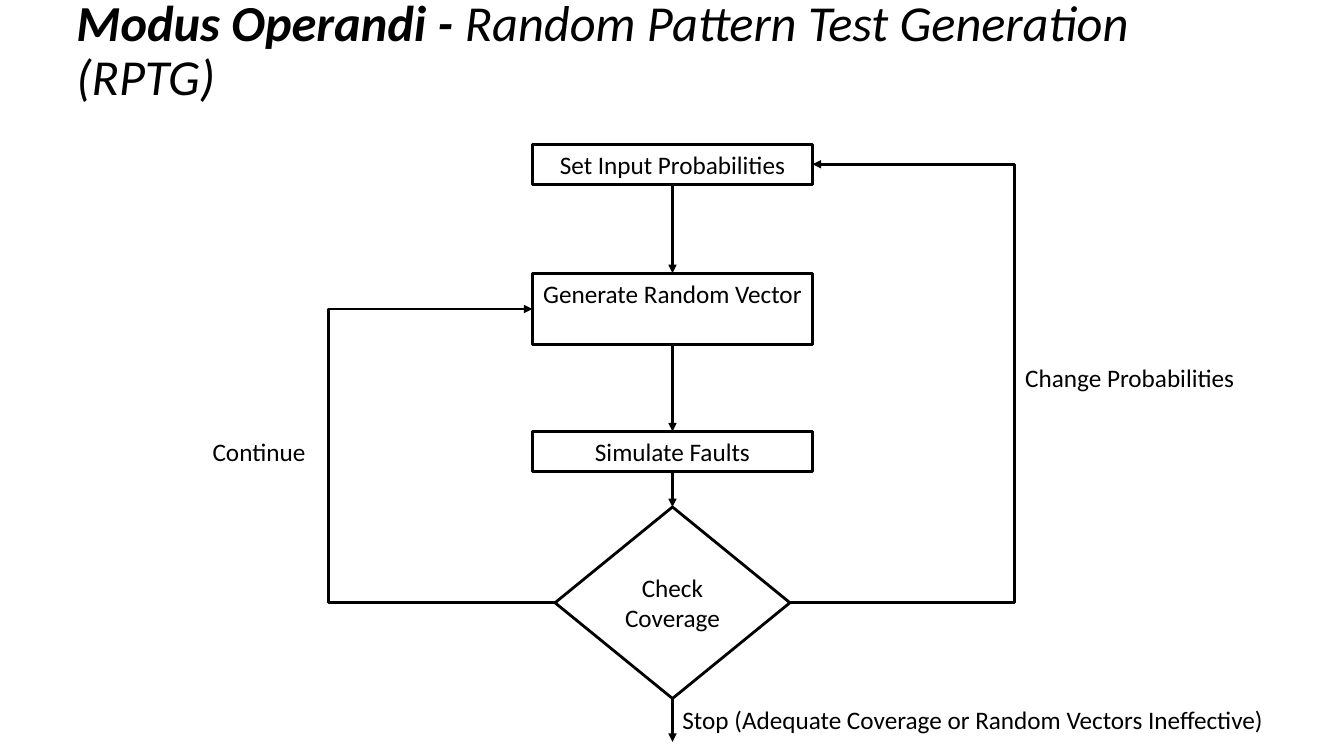
from pptx import Presentation
from pptx.dml.color import RGBColor
from pptx.enum.shapes import MSO_CONNECTOR, MSO_SHAPE
from pptx.enum.text import MSO_ANCHOR, PP_ALIGN
from pptx.oxml.ns import qn
from pptx.util import Inches, Pt
from lxml import etree

RECT, DIAMOND = MSO_SHAPE.RECTANGLE, MSO_SHAPE.DIAMOND
STRAIGHT, ELBOW = MSO_CONNECTOR.STRAIGHT, MSO_CONNECTOR.ELBOW
TOP, MIDDLE, BOTTOM = MSO_ANCHOR.TOP, MSO_ANCHOR.MIDDLE, MSO_ANCHOR.BOTTOM
LEFT, CENTER = PP_ALIGN.LEFT, PP_ALIGN.CENTER
SIDE_TOP, SIDE_LEFT, SIDE_BOTTOM, SIDE_RIGHT = range(4)
BLACK, WHITE = "000000", "FFFFFF"

TITLE = [
    ("Modus Operandi - ", {"bold": True, "italic": True}),
    ("Random Pattern Test Generation (RPTG)", {"bold": False, "italic": True}),
]
TITLE_BOX = (0.66, 0.03, 11.89, 1.08)
AXIS = 6.67
STEPS = [
    ("Set Input Probabilities", RECT, 1.43, 2.78, 0.4, None, TOP),
    ("Generate Random Vector", RECT, 2.71, 2.78, 0.71, None, TOP),
    ("Simulate Faults", RECT, 4.28, 2.78, 0.4, None, TOP),
    ("Check Coverage", DIAMOND, 5.03, 2.33, 1.9, WHITE, MIDDLE),
]
LOOPS = [
    ("Set Input Probabilities", SIDE_RIGHT, 10.06),
    ("Generate Random Vector", SIDE_LEFT, 3.26),
]
STOP_END = 7.36
LABELS = [
    ("Continue", (2.01, 4.28, 1.38, 0.4)),
    ("Change Probabilities", (10.07, 3.55, 2.69, 0.4)),
    ("Stop (Adequate Coverage or Random Vectors Ineffective)", (6.67, 6.94, 6.19, 0.4)),
]


def color(value):
    return RGBColor.from_string(value)


def write(owner, runs, size=18, anchor=TOP, align=LEFT, spacing=1.0):
    frame = owner.text_frame
    frame.word_wrap = True
    frame.vertical_anchor = anchor
    paragraph = frame.paragraphs[0]
    paragraph.alignment = align
    paragraph.line_spacing = spacing
    for text, style in runs:
        run = paragraph.add_run()
        run.text = text
        run.font.color.rgb = color(BLACK)
        for name, value in {"name": "Calibri", "size": Pt(size), **style}.items():
            setattr(run.font, name, value)


def outline(owner):
    owner.line.color.rgb = color(BLACK)
    owner.line.width = Pt(2)


def add_step(text, kind, top, width, height, fill, anchor):
    box = [Inches(v) for v in (AXIS - width / 2, top, width, height)]
    step = slide.shapes.add_shape(kind, *box)
    step.shadow.inherit = False
    if fill:
        step.fill.solid()
        step.fill.fore_color.rgb = color(fill)
    else:
        step.fill.background()
    outline(step)
    write(step, [(text, {})], anchor=anchor, align=CENTER)
    return step


def add_arrow(kind, source, source_side, target=None, target_side=None):
    arrow = slide.shapes.add_connector(kind, 0, 0, Inches(AXIS), Inches(STOP_END))
    arrow.begin_connect(source, source_side)
    if target is not None:
        arrow.end_connect(target, target_side)
    outline(arrow)
    properties = arrow._element.spPr
    etree.SubElement(properties.find(qn("a:ln")), qn("a:tailEnd"), type="triangle")
    etree.SubElement(properties, qn("a:effectLst"))
    return arrow


def bend_at(arrow, lane):
    span = arrow.end_x - arrow.begin_x
    ratio = round((Inches(lane) - arrow.begin_x) / span * 100000)
    properties = arrow._element.spPr
    guides = properties.find(qn("a:prstGeom")).get_or_add_avLst()
    etree.SubElement(guides, qn("a:gd"), name="adj1", fmla=f"val {ratio}")
    if span < 0:
        turn = properties.find(qn("a:xfrm"))
        for name, value in {"flipH": False, "flipV": False, "rot": 180.0}.items():
            setattr(turn, name, value)


deck = Presentation()
deck.slide_width, deck.slide_height = Inches(13.33), Inches(7.5)
slide = deck.slides.add_slide(deck.slide_layouts[6])

title = slide.shapes.add_textbox(*map(Inches, TITLE_BOX))
write(title, TITLE, size=36, anchor=BOTTOM, spacing=0.9)

steps = {step[0]: add_step(*step) for step in STEPS}
chain = list(steps.values())
check = chain[-1]

for target, side, lane in LOOPS:
    bend_at(add_arrow(ELBOW, check, side, steps[target], side), lane)
for upper, lower in zip(chain, chain[1:]):
    add_arrow(STRAIGHT, upper, SIDE_BOTTOM, lower, SIDE_TOP)
add_arrow(STRAIGHT, check, SIDE_BOTTOM)

for text, box in LABELS:
    write(slide.shapes.add_textbox(*map(Inches, box)), [(text, {})])

deck.save("out.pptx")
